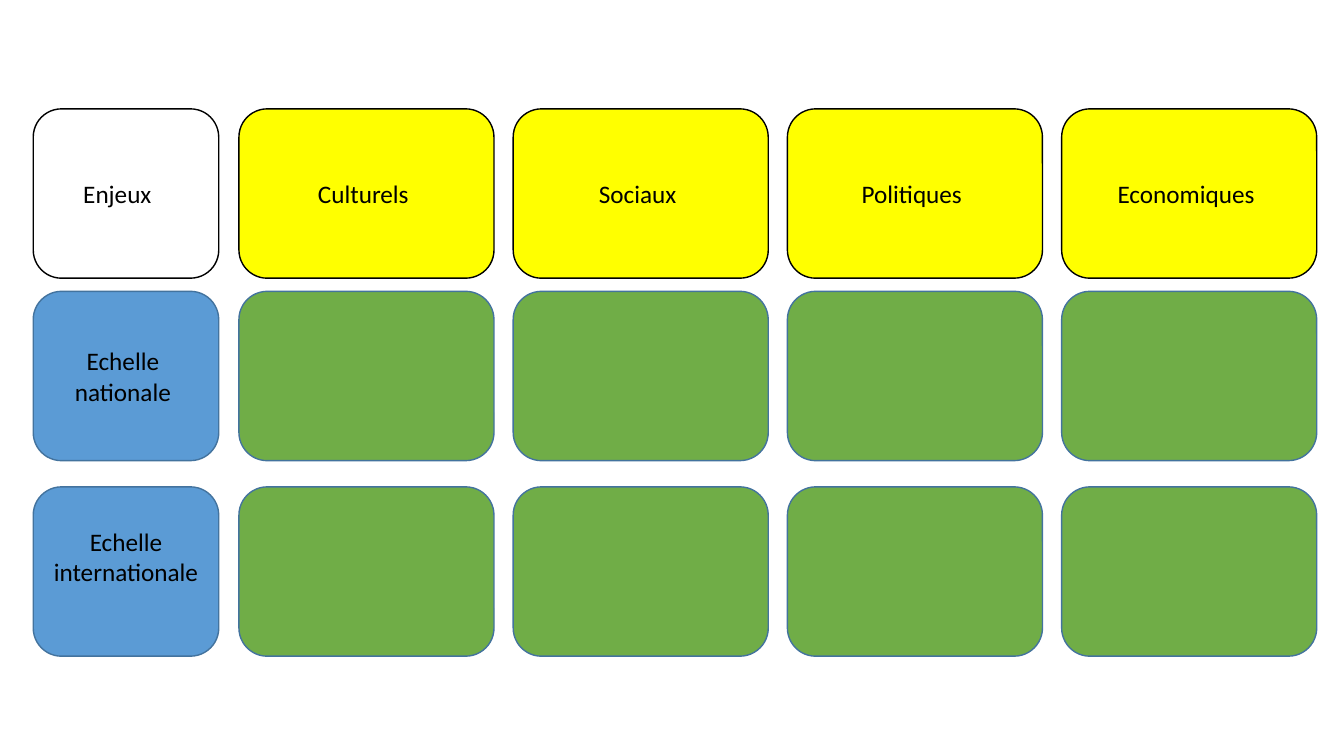
from pptx import Presentation
from pptx.dml.color import RGBColor
from pptx.enum.shapes import MSO_SHAPE
from pptx.enum.text import MSO_ANCHOR, PP_ALIGN
from pptx.util import Inches, Pt

BLACK = RGBColor(0x00, 0x00, 0x00)
WHITE = RGBColor(0xFF, 0xFF, 0xFF)
YELLOW = RGBColor(0xFF, 0xFF, 0x00)
BLUE = RGBColor(0x5B, 0x9B, 0xD5)
GREEN = RGBColor(0x70, 0xAD, 0x47)
DARK_BLUE = RGBColor(0x43, 0x73, 0x9E)

LABEL_LEFT, LABEL_WIDTH = 0.33, 1.84
ISSUE_LEFT, ISSUE_WIDTH, ISSUE_STEP = 2.37, 2.53, 2.72
ROW_HEIGHT = 1.68
ISSUES = ["Culturels", "Sociaux", "Politiques", "Economiques"]

deck = Presentation()
deck.slide_width = Inches(13.33)
deck.slide_height = Inches(7.5)
page = deck.slides.add_slide(deck.slide_layouts[6])


def add_cell(left, top, width, fill, line, text="", margin_right=0.1, margin_bottom=0.05):
    box = page.shapes.add_shape(
        MSO_SHAPE.ROUNDED_RECTANGLE,
        Inches(left), Inches(top), Inches(width), Inches(ROW_HEIGHT),
    )
    box.shadow.inherit = False
    box.fill.solid()
    box.fill.fore_color.rgb = fill
    box.line.color.rgb = line
    box.line.width = Pt(1)
    if text:
        frame = box.text_frame
        frame.word_wrap = True
        frame.vertical_anchor = MSO_ANCHOR.MIDDLE
        frame.margin_right = Inches(margin_right)
        frame.margin_bottom = Inches(margin_bottom)
        frame.text = text
        para = frame.paragraphs[0]
        para.alignment = PP_ALIGN.CENTER
        span = para.runs[0]
        span.font.name = "Calibri"
        span.font.size = Pt(18)
        span.font.color.rgb = BLACK


rows = [
    (1.08, "Enjeux", WHITE, YELLOW, BLACK, ISSUES, 0.27, 0.05),
    (2.89, "Echelle nationale", BLUE, GREEN, DARK_BLUE, [""] * 4, 0.16, 0.05),
    (4.83, "Echelle internationale", BLUE, GREEN, DARK_BLUE, [""] * 4, 0.1, 0.35),
]

for top, label, label_fill, issue_fill, line, issues, margin_right, margin_bottom in rows:
    add_cell(LABEL_LEFT, top, LABEL_WIDTH, label_fill, line, label, margin_right, margin_bottom)
    for column, issue in enumerate(issues):
        left = ISSUE_LEFT + column * ISSUE_STEP
        add_cell(left, top, ISSUE_WIDTH, issue_fill, line, issue, 0.16)

deck.save("out.pptx")
